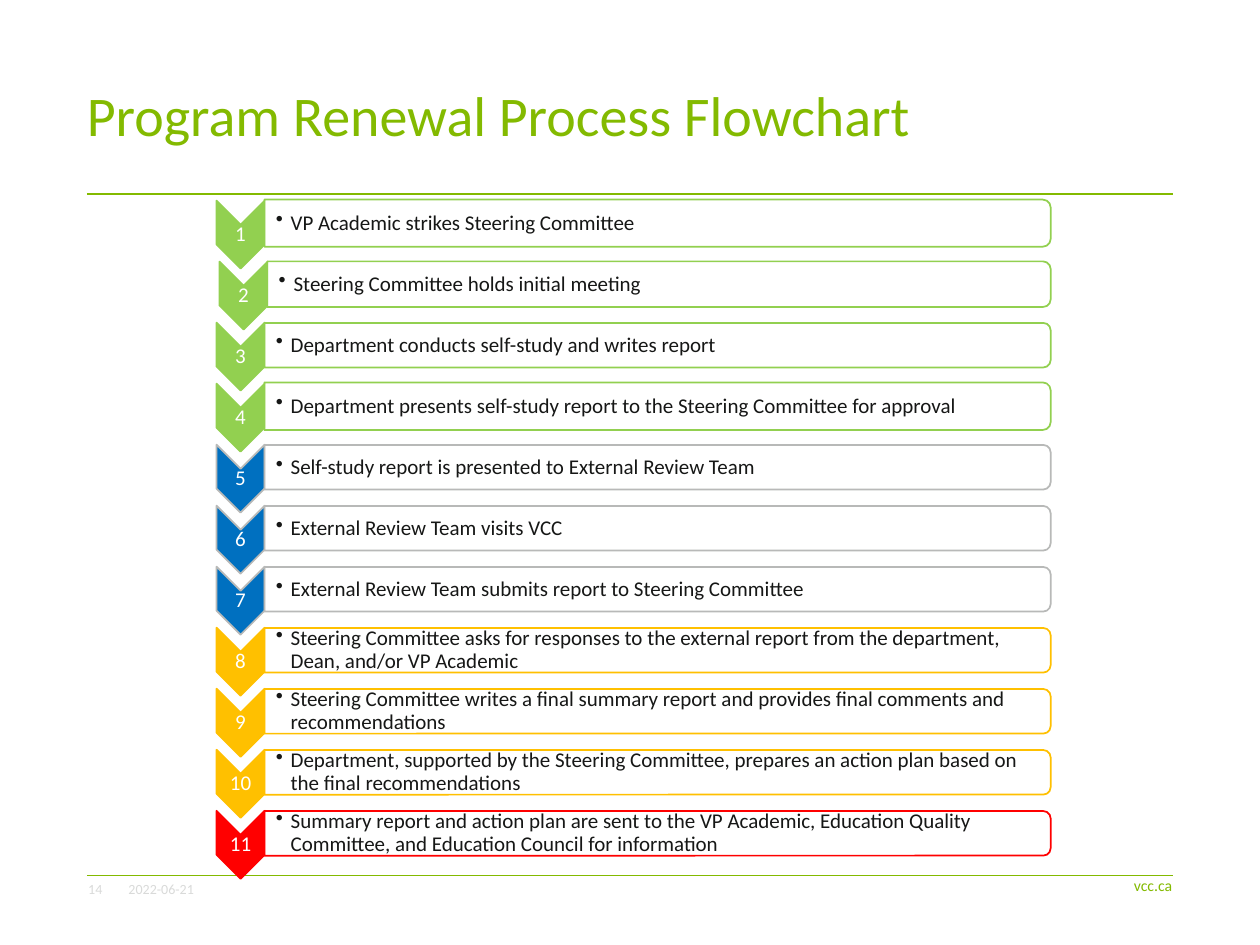
from lxml import etree
from pptx import Presentation
from pptx.dml.color import RGBColor
from pptx.enum.shapes import MSO_CONNECTOR, MSO_SHAPE
from pptx.enum.text import MSO_ANCHOR, PP_ALIGN
from pptx.oxml.ns import qn
from pptx.util import Cm, Pt

LINE = MSO_CONNECTOR.STRAIGHT
CHEVRON = MSO_SHAPE.CHEVRON
BAR = MSO_SHAPE.ROUND_2_SAME_RECTANGLE
TOP, MIDDLE, BOTTOM = MSO_ANCHOR.TOP, MSO_ANCHOR.MIDDLE, MSO_ANCHOR.BOTTOM
LEFT, CENTER, RIGHT = PP_ALIGN.LEFT, PP_ALIGN.CENTER, PP_ALIGN.RIGHT

COLORS = {
    "brand": "83BA00", "muted": "D9DAD9", "ink": "161716", "white": "FFFFFF",
    "green": "92D050", "blue": "0070C0", "gray": "B8B9B8",
    "gold": "FFC000", "red": "FF0000",
}

PITCH = 1.23
BADGE_X, BADGE_Y = 4.85, 4.73
BAR_LEFT, BAR_RIGHT, BAR_Y = 5.33, 21.18, 4.5
NUDGE = {2: 0.06}
DEPTH = {1: 0.95, 2: 0.92, 4: 0.96}

STEPS = [
    ("green", "green", "VP Academic strikes Steering Committee"),
    ("green", "green", "Steering Committee holds initial meeting"),
    ("green", "green", "Department conducts self-study and writes report"),
    ("green", "green", "Department presents self-study report to the Steering Committee for approval"),
    ("blue", "gray", "Self-study report is presented to External Review Team"),
    ("blue", "gray", "External Review Team visits VCC"),
    ("blue", "gray", "External Review Team submits report to Steering Committee"),
    ("gold", "gold", "Steering Committee asks for responses to the external report "
                     "from the department, Dean, and/or VP Academic"),
    ("gold", "gold", "Steering Committee writes a final summary report and provides "
                     "final comments and recommendations"),
    ("gold", "gold", "Department, supported by the Steering Committee, prepares an "
                     "action plan based on the final recommendations"),
    ("red", "red", "Summary report and action plan are sent to the VP Academic, "
                   "Education Quality Committee, and Education Council for information"),
]


def rgb(name):
    """Return the named colour."""
    return RGBColor.from_string(COLORS[name])


def add_text(slide, text, box, size=12, color="ink", align=LEFT, anchor=TOP,
             space=None, inset=(0, 0), bullet=False):
    """Add a text box; box is left, top, width and height in cm."""
    frame = slide.shapes.add_textbox(*map(Cm, box)).text_frame
    frame.word_wrap = True
    frame.vertical_anchor = anchor
    frame.margin_left = Cm(inset[0])
    frame.margin_right = frame.margin_top = frame.margin_bottom = Cm(inset[1])
    para = frame.paragraphs[0]
    para.text = text
    para.alignment = align
    if space:
        para.line_spacing = space
    if bullet:
        props = para._p.get_or_add_pPr()
        props.set("marL", str(Cm(0.3)))
        props.set("indent", str(-Cm(0.3)))
        etree.SubElement(props, qn("a:buChar")).set("char", "•")
    font = para.runs[0].font
    font.name = "Calibri"
    font.size = Pt(size)
    font.color.rgb = rgb(color)


def add_rule(slide, top):
    """Add a horizontal rule across the content width."""
    rule = slide.shapes.add_connector(LINE, Cm(1.75), Cm(top), Cm(23.65), Cm(top))
    rule.line.color.rgb = rgb("brand")
    rule.line.width = Pt(1)
    etree.SubElement(rule._element.spPr, qn("a:effectLst"))


def add_turned(slide, kind, mid, size, fill, line):
    """Add a shape turned a quarter clockwise about its middle."""
    (x, y), (wide, high) = mid, size
    shape = slide.shapes.add_shape(
        kind, Cm(x - wide / 2), Cm(y - high / 2), Cm(wide), Cm(high))
    shape.rotation = 90
    shape.shadow.inherit = False
    shape.fill.solid()
    shape.fill.fore_color.rgb = rgb(fill)
    shape.line.color.rgb = rgb(line)
    shape.line.width = Pt(1)
    return shape


def add_step(slide, num, fill, line, text):
    """Add one numbered chevron with its bar of text."""
    shift = NUDGE.get(num, 0)
    drop = (num - 1) * PITCH
    x, y = BADGE_X + shift, BADGE_Y + drop
    add_turned(slide, CHEVRON, (x, y), (1.37, 0.97), fill, line)
    add_text(slide, str(num), (x - 0.48, y - 0.2, 0.96, 0.4), color="white",
             align=CENTER, anchor=MIDDLE, space=0.9, inset=(0.02, 0.02))

    left, mid = BAR_LEFT + shift, BAR_Y + drop
    width, depth = BAR_RIGHT - left, DEPTH.get(num, 0.9)
    bar = add_turned(slide, BAR, (left + width / 2, mid), (depth, width), "white", line)
    tint = bar._element.spPr.find(qn("a:solidFill"))[0]
    etree.SubElement(tint, qn("a:alpha")).set("val", "90000")
    high = depth - 0.08
    add_text(slide, text, (left, mid - high / 2, width - 0.05, high),
             anchor=MIDDLE, space=0.9, inset=(0.23, 0.02), bullet=True)


def main():
    """Build and save the slide."""
    deck = Presentation()
    deck.slide_width, deck.slide_height = Cm(25.4), Cm(19.05)
    slide = deck.slides.add_slide(deck.slide_layouts[6])
    for top in (3.91, 17.65):
        add_rule(slide, top)
    add_text(slide, "vcc.ca", (22.28, 17.65, 1.35, 0.66), size=9, color="brand", align=RIGHT)
    add_text(slide, "2022-06-21", (2.59, 17.75, 10.8, 0.46), size=8, color="muted")
    add_text(slide, "14", (1.78, 17.75, 0.79, 0.46), size=8, color="muted")
    add_text(slide, "Program Renewal Process Flowchart", (1.75, 0.48, 21.9, 2.51),
             size=32, color="brand", anchor=BOTTOM, space=0.9)
    for num, step in enumerate(STEPS, 1):
        add_step(slide, num, *step)
    deck.save("out.pptx")


if __name__ == "__main__":
    main()
